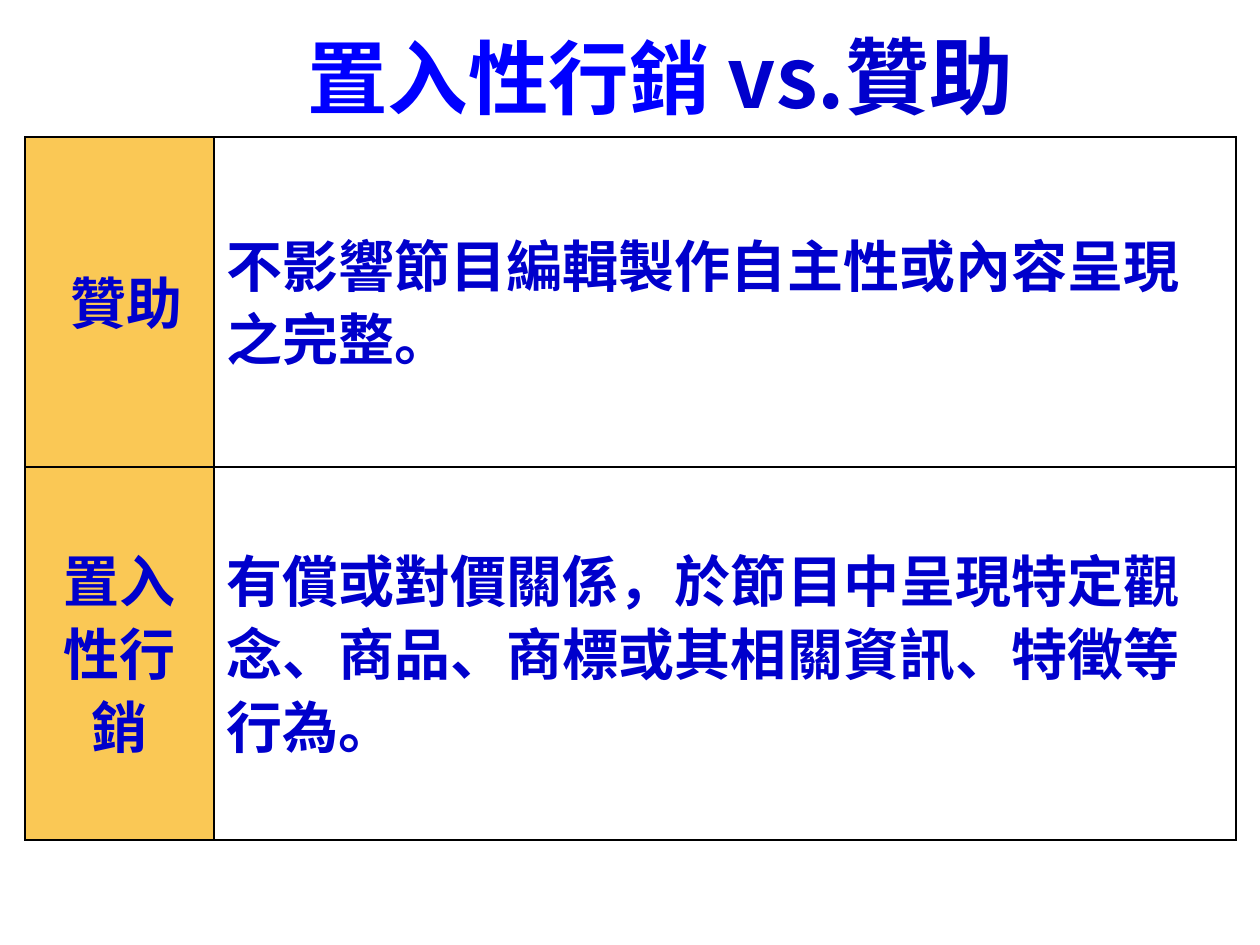
import pptx
import pptx.util
import pptx.dml.color
import pptx.enum.text
import pptx.oxml
import pptx.oxml.ns
from lxml import etree

Pt = pptx.util.Pt
ALIGN = pptx.enum.text.PP_ALIGN
MIDDLE = pptx.enum.text.MSO_ANCHOR.MIDDLE
qn = pptx.oxml.ns.qn

# Content
TITLE = [("置入性行銷 ", 46, "bright"), ("vs.贊助", 48, "text")]
ROWS = [
    (" 贊助", "不影響節目編輯製作自主性或內容呈現之完整。"),
    ("置入性行銷", "有償或對價關係，於節目中呈現特定觀念、商品、商標或其相關資訊、特徵等行為。"),
]

# Format
FONT = "Noto Sans CJK SC"
COLORS = {"bright": "0000FF", "text": "0000CC", "label": "FAC855",
          "cell": "FFFFFF", "border": "000000"}
TITLE_BOX = dict(left=110.9, top=-2.2, width=532.8, height=90)
TABLE_BOX = (14.4, 78.4)
COL_WIDTHS = (108, 584)
ROW_HEIGHTS = (188.6, 213.1)
COLUMN_STYLES = [("label", ALIGN.CENTER), ("cell", ALIGN.LEFT)]
CELL_FORMAT = dict(vertical_anchor=MIDDLE, margin_left=Pt(7.2), margin_right=Pt(7.2),
                   margin_top=Pt(3.6), margin_bottom=Pt(3.6))


def rgb(name):
    return pptx.dml.color.RGBColor.from_string(COLORS[name])


def set_all(obj, values):
    for name, value in values.items():
        setattr(obj, name, value)


def add_run(p, text, size, color):
    r = p.add_run()
    r.text = text
    set_all(r.font, dict(name=FONT, size=Pt(size), bold=True))
    r.font.color.rgb = rgb(color)
    ea = etree.SubElement(r.font._element, qn("a:ea"))
    ea.set("typeface", FONT)


def add_borders(cell):
    tcPr = cell._tc.get_or_add_tcPr()
    for i, side in enumerate(("lnL", "lnR", "lnT", "lnB")):
        ln = etree.Element(qn("a:" + side), w=str(Pt(1)))
        fill = etree.SubElement(ln, qn("a:solidFill"))
        etree.SubElement(fill, qn("a:srgbClr"), val=COLORS["border"])
        tcPr.insert(i, ln)


prs = pptx.Presentation()
set_all(prs, dict(slide_width=Pt(720), slide_height=Pt(540)))
s = prs.slides.add_slide(prs.slide_layouts[5])

# Title
title = s.shapes.title
set_all(title, {name: Pt(value) for name, value in TITLE_BOX.items()})
tf = title.text_frame
set_all(tf, dict(word_wrap=True, vertical_anchor=MIDDLE,
                 auto_size=pptx.enum.text.MSO_AUTO_SIZE.NONE))
p = tf.paragraphs[0]
p.alignment = ALIGN.CENTER
for text, size, color in TITLE:
    add_run(p, text, size, color)

# Comparison table
frame = s.shapes.add_table(len(ROWS), len(COL_WIDTHS), *map(Pt, TABLE_BOX),
                           Pt(sum(COL_WIDTHS)), Pt(sum(ROW_HEIGHTS)))
table = frame.table
set_all(table, dict(first_row=False, horz_banding=False))
for column, width in zip(table.columns, COL_WIDTHS):
    column.width = Pt(width)
for row, height, texts in zip(table.rows, ROW_HEIGHTS, ROWS):
    row.height = Pt(height)
    for cell, text, (fill, align) in zip(row.cells, texts, COLUMN_STYLES):
        set_all(cell, CELL_FORMAT)
        cell.fill.solid()
        cell.fill.fore_color.rgb = rgb(fill)
        add_borders(cell)
        p = cell.text_frame.paragraphs[0]
        set_all(p, dict(alignment=align, line_spacing=0.9))
        add_run(p, text, 32, "text")

prs.save("out.pptx")
